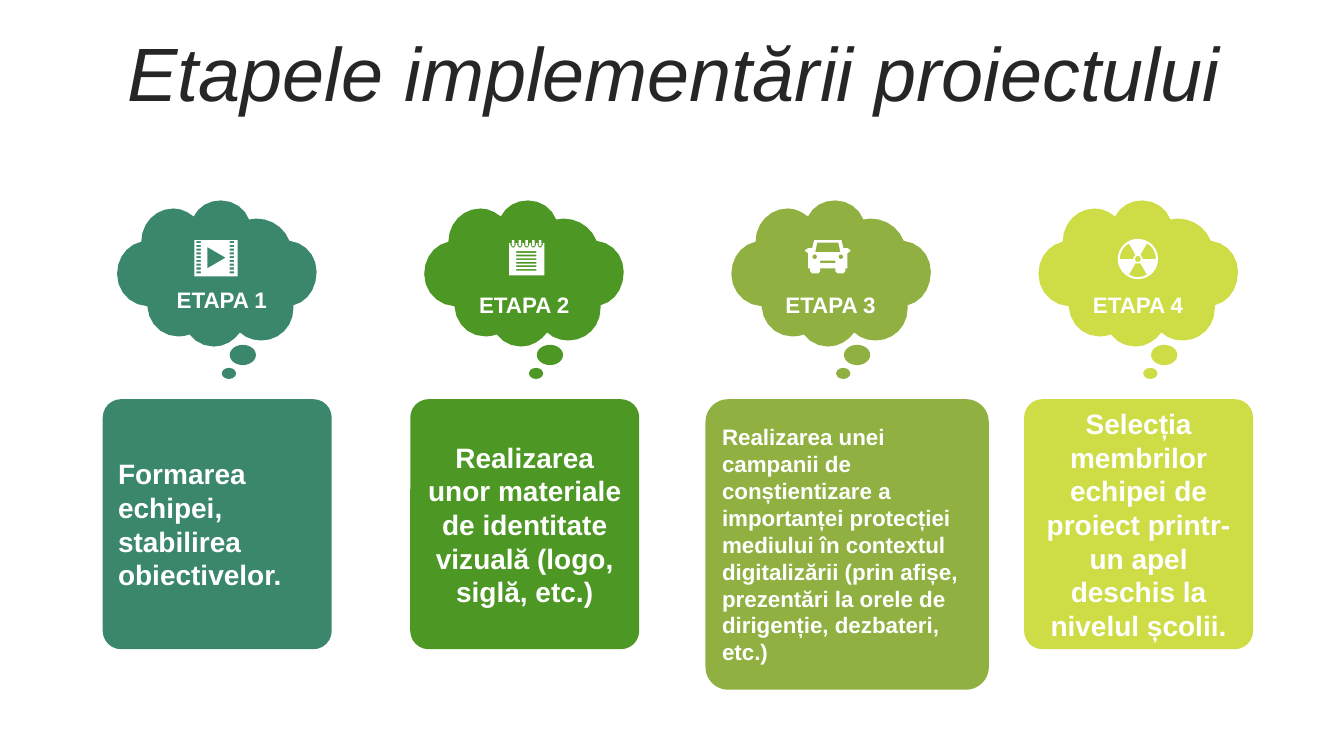
import math

from pptx import Presentation
from pptx.dml.color import RGBColor
from pptx.enum import shapes, text
from pptx.util import Cm, Pt

WHITE = RGBColor(0xFF, 0xFF, 0xFF)
INK = RGBColor(0x26, 0x26, 0x26)
TEAL = RGBColor(0x3A, 0x87, 0x6B)
GREEN = RGBColor(0x4D, 0x97, 0x24)
OLIVE = RGBColor(0x90, 0xB1, 0x41)
LIME = RGBColor(0xCE, 0xDD, 0x46)
FONT = "Arial"
LEFT, CENTER = text.PP_ALIGN.LEFT, text.PP_ALIGN.CENTER

TITLE = "Etapele implementării proiectului"
# label, label left and top, body, body size, alignment, card left/width/height, colour
STAGES = [
    ("ETAPA 1", (3.28, 7.09), "Formarea echipei, stabilirea obiectivelor.",
     20, LEFT, (2.59, 5.77, 6.3), TEAL),
    ("ETAPA 2", (10.9, 7.21),
     "Realizarea unor materiale de identitate vizuală (logo, siglă, etc.)",
     20, CENTER, (10.34, 5.77, 6.3), GREEN),
    ("ETAPA 3", (18.62, 7.21),
     "Realizarea unei campanii de conștientizare a importanței protecției "
     "mediului în contextul digitalizării (prin afișe, prezentări la orele "
     "de dirigenție, dezbateri, etc.)",
     16, LEFT, (17.78, 7.14, 7.32), OLIVE),
    ("ETAPA 4", (26.37, 7.21),
     "Selecția membrilor echipei de proiect printr-un apel deschis la "
     "nivelul școlii.",
     20, CENTER, (25.81, 5.77, 6.3), LIME),
]
CLOUD_LEFT, CLOUD_TOP, PITCH = 2.95, 5.05, 7.74
CARD_TOP = 10.06
PUFFS = [(2.84, 3.64, 0.66, 0.51), (2.64, 4.22, 0.36, 0.28)]

# Outlines are in hundredths of an inch
UNIT = 0.0254
CLOUD_START = (103, 0)
CLOUD_CURVES = [  # two control points and an end point each
    (116, 0, 127, 8, 131, 19), (134, 19, 136, 18, 138, 18),
    (153, 18, 166, 27, 171, 40), (187, 42, 198, 55, 198, 71),
    (198, 88, 188, 101, 175, 104), (175, 105, 175, 106, 175, 107),
    (175, 125, 161, 139, 143, 139), (135, 139, 127, 136, 122, 131),
    (116, 139, 107, 145, 96, 145), (86, 145, 77, 140, 72, 133),
    (69, 134, 65, 135, 61, 135), (44, 135, 31, 122, 30, 105),
    (13, 104, 0, 90, 0, 73), (0, 57, 10, 44, 24, 41),
    (24, 23, 38, 8, 56, 8), (63, 8, 70, 11, 76, 16),
    (81, 6, 91, 0, 103, 0),
]
CAR_RIGHT_HALF = [(36, 0), (38, 8), (42, 8), (45, 10), (45, 11), (42, 13),
                  (42, 28), (40, 28), (40, 31), (38, 33), (32, 33), (30, 31),
                  (30, 28)]


def curve_points(start, curves, spacing=9):
    """Sample a chain of cubic curves about every `spacing` units."""
    points = [start]
    for x1, y1, x2, y2, x3, y3 in curves:
        x0, y0 = points[-1]
        steps = math.ceil(math.hypot(x3 - x0, y3 - y0) / spacing)
        for k in range(1, steps + 1):
            t = k / steps
            a, b, c, d = (1 - t)**3, 3*t*(1 - t)**2, 3*t*t*(1 - t), t**3
            points.append((a*x0 + b*x1 + c*x2 + d*x3,
                           a*y0 + b*y1 + c*y2 + d*y3))
    return points


def rect(x, y, w, h):
    return [(x, y), (x + w, y), (x + w, y + h), (x, y + h)]


def arc(cx, cy, radius, start=0, end=360):
    sweep = math.radians(end - start)
    steps = max(abs(end - start) // 60, round(radius * abs(sweep) / 5))
    angles = [math.radians(start) + sweep * k / steps for k in range(steps + 1)]
    return [(cx + radius * math.cos(a), cy + radius * math.sin(a))
            for a in angles]


def slot(cx, top, bottom, half):
    """Upright bar with a rounded lower end."""
    return [(cx - half, top)] + arc(cx, bottom - half, half, 180, 0) + [(cx + half, top)]


def film_icon():
    holes = [rect(x, 1 + 3.75 * i, 4.5, 2) for i in range(9) for x in (2, 35)]
    return [rect(0, 0, 43, 36), [(13, 7), (13, 28), (31, 17.5)]] + holes


def notepad_icon():
    rings = [4 + 6.7 * i for i in range(5)]
    return ([rect(0, 3, 35, 32)]
            + [rect(7, 11 + 3.55 * i, 20, 1.6) for i in range(6)]
            + [slot(x, 3, 7.5, 2.6) for x in rings]
            + [rect(x - 1.2, 0, 2.4, 6) for x in rings])


def car_icon():
    mirrored = [(45 - x, y) for x, y in reversed(CAR_RIGHT_HALF)]
    return [CAR_RIGHT_HALF + mirrored,
            [(12, 2.5), (10, 12), (35, 12), (33, 2.5)],
            arc(9.5, 16.5, 2.5), arc(35.5, 16.5, 2.5), rect(15, 20.5, 15, 2.5)]


def radiation_icon():
    blades = [arc(20, 20, 18, a, a + 60) + arc(20, 20, 5, a + 60, a)
              for a in (60, 180, 300)]
    return [arc(20, 20, 20), arc(20, 20, 3.2)] + blades


ICONS = [(4.9, 6.05, film_icon()), (12.83, 6.05, notepad_icon()),
         (20.29, 6.05, car_icon()), (28.17, 6.02, radiation_icon())]


def paint(sp, color):
    sp.shadow.inherit = False
    sp.fill.solid()
    sp.fill.fore_color.rgb = color
    sp.line.fill.background()


def add_outline(parent, left, top, contours, color):
    scaled = [[(Cm(x * UNIT), Cm(y * UNIT)) for x, y in c] for c in contours]
    builder = parent.build_freeform(*scaled[0][0], scale=1.0)
    for i, contour in enumerate(scaled):
        if i:
            builder.move_to(*contour[0])
        builder.add_line_segments(contour[1:], close=True)
    paint(builder.convert_to_shape(Cm(left), Cm(top)), color)


def write(sp, content, size, align, color=WHITE, bold=True, italic=False, side=0.25):
    tf = sp.text_frame
    tf.word_wrap = True
    tf.margin_left = tf.margin_right = Cm(side)
    tf.margin_top = tf.margin_bottom = Cm(0.13)
    p = tf.paragraphs[0]
    p.alignment = align
    r = p.add_run()
    r.text = content
    r.font.name, r.font.size = FONT, Pt(size)
    r.font.bold, r.font.italic = bold, italic
    r.font.color.rgb = color
    return tf


def main():
    prs = Presentation()
    prs.slide_width, prs.slide_height = Cm(33.87), Cm(19.05)
    s = prs.slides.add_slide(prs.slide_layouts[6])

    title = s.shapes.add_textbox(Cm(0.89), Cm(0.94), Cm(32.16), Cm(2.01))
    tf = write(title, TITLE, 54, CENTER, INK, bold=False, italic=True)
    tf.vertical_anchor = text.MSO_ANCHOR.MIDDLE
    tf.paragraphs[0].line_spacing = 0.9

    cloud = curve_points(CLOUD_START, CLOUD_CURVES)
    for i, (label, spot, body, size, align, card, color) in enumerate(STAGES):
        left = CLOUD_LEFT + i * PITCH
        bubble = s.shapes.add_group_shape().shapes
        add_outline(bubble, left, CLOUD_TOP, [cloud], color)
        for dx, dy, w, h in PUFFS:
            paint(bubble.add_shape(shapes.MSO_SHAPE.OVAL, Cm(left + dx),
                                   Cm(CLOUD_TOP + dy), Cm(w), Cm(h)), color)

        x, w, h = card
        sp = s.shapes.add_shape(shapes.MSO_SHAPE.ROUNDED_RECTANGLE,
                                Cm(x), Cm(CARD_TOP), Cm(w), Cm(h))
        sp.adjustments[0] = 0.08
        paint(sp, color)
        write(sp, body, size, align).vertical_anchor = text.MSO_ANCHOR.MIDDLE

        tag = s.shapes.add_textbox(Cm(spot[0]), Cm(spot[1]), Cm(4.62), Cm(0.94))
        tf = write(tag, label, 16, CENTER, side=0.3)
        tf.auto_size = text.MSO_AUTO_SIZE.SHAPE_TO_FIT_TEXT

    for left, top, contours in ICONS:
        add_outline(s.shapes, left, top, contours, WHITE)

    prs.save("out.pptx")


if __name__ == "__main__":
    main()
